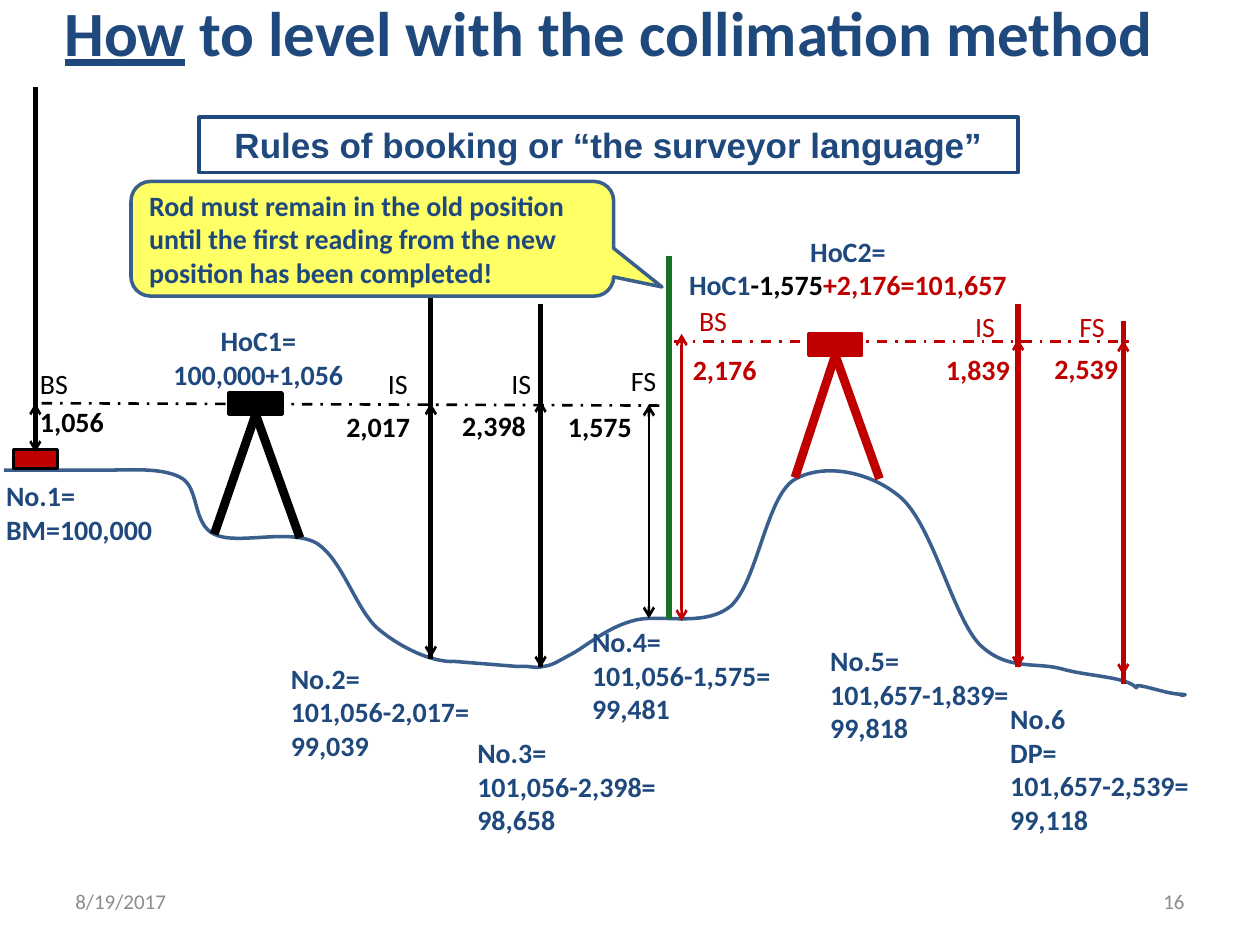
from lxml import etree
from pptx import Presentation
from pptx.dml.color import RGBColor
from pptx.enum import dml, shapes, text
from pptx.oxml.ns import qn
from pptx.util import Pt

THEME = dict(navy="1F497D", edge="3A5F8C", red="C00000", black="000000",
             green="187223", yellow="FFFF66", grey="8C8C8C",
             body="Calibri", banner="Arial",
             title_size=36, banner_size=20, text_size=16, footer_size=12)
NAVY, RED, BLACK = THEME["navy"], THEME["red"], THEME["black"]

# ---- Content: text, then places in points ----
TITLE = [[("How", {"underline": True}),
          (" to level with the collimation method", {})]]
BANNER = ["Rules of booking or “the surveyor language”"]
WARNING = ["Rod must remain in the old position until the first reading "
           "from the new position has been completed!"]
# sight, sight place, value, value place, arrow (x, top, bottom), colour
READINGS = [
    ("BS", (15.8, 205.9), "1,056", (15.8, 227.5), (20.2, 230.4, 258.5), BLACK),
    ("IS", (214.6, 205.9), "2,017", (190.8, 230.4), (246.2, 230.4, 375.8), BLACK),
    ("IS", (285.1, 205.9), "2,398", (257, 229.7), (308.9, 229, 381.6), BLACK),
    ("FS", (353.5, 204.5), "1,575", (317.5, 230.4), (370.8, 231.1, 353.5), BLACK),
    ("BS", (392.4, 169.9), "2,176", (388.8, 198), (389.5, 190.8, 355), RED),
    ("IS", (550.1, 173.5), "1,839", (533.5, 198), (581.8, 193.7, 381.6), RED),
    ("FS", (609.8, 173.5), "2,539", (595.4, 197.3), (641.9, 194.4, 385.9), RED),
]
# lines, left, top, width
STATIONS = [
    (["No.1=", "BM=100,000"], -3.6, 270, 121),
    (["No.2=", "101,056-2,017=", "99,039"], 159.1, 374.4, 126.7),
    (["No.3=", "101,056-2,398=", "98,658"], 265.7, 416.9, 121),
    (["No.4=", "101,056-1,575=", "99,481"], 331.2, 353.5, 135.4),
    (["No.5=", "101,657-1,839=", "99,818"], 467.3, 364.3, 121.7),
    (["No.6", "DP=", "101,657-2,539=", "99,118"], 570.2, 397.4, 128.9),
]
HEIGHTS = [
    (["HoC1=", "100,000+1,056"], 88.6, 181.4, 118.1),
    (["HoC2=", [("HoC1", {}), ("-1,575", {"color": BLACK}),
                ("+2,176=101,657", {"color": RED})]], 385.2, 130.3, 198.7),
]
FOOTERS = [("8/19/2017", 36, "left"), ("16", 516.2, "right")]
ROD_LENGTH = 207.5
RODS = [(20.5, 49.7, BLACK), (246.2, 169.2, BLACK), (308.9, 173.5, BLACK),
        (382.3, 146.2, THEME["green"]), (581.8, 173.5, RED), (642.2, 183.6, RED)]
SIGHT_LINES = [((23.8, 230.4), (385.2, 231.8), BLACK),
               ((385.2, 195.1), (646.6, 195.1), RED)]
# left, top, feet, colour
INSTRUMENTS = [
    (131, 224.6, [(171.4, 307.4), (122.4, 305.3)], BLACK),
    (462.2, 190.8, [(502.6, 273.6), (454.3, 272.9)], RED),
]
# One point is a straight step, three points are a curve
GROUND_START = (2.2, 268.6)
GROUND = [
    [(64.8, 268.6)],
    [(74.9, 268.6), (94.3, 267.1), (104.4, 273.6)],
    [(113.8, 280.1), (110.2, 299.5), (122.4, 305.3)],
    [(135.4, 311.8), (164.9, 301.7), (180.7, 310.3)],
    [(195.8, 319.7), (203, 347.8), (216, 359.3)],
    [(229.7, 370.8), (247.7, 378.7), (259.9, 378)],
    [(295.9, 380.9)],
    [(303.1, 380.2), (305.3, 382.3), (310.3, 380.9)],
    [(315.4, 380.2), (317.5, 378.7), (325.4, 374.4)],
    [(334.1, 370.1), (345.6, 359.3), (360.7, 355)],
    [(375.8, 349.9), (401.8, 359.3), (417.6, 346.3)],
    [(432.7, 332.6), (437.8, 284.4), (453.6, 274.3)],
    [(470.2, 264.2), (497.5, 269.3), (514.8, 284.4)],
    [(532.8, 300.2), (544.3, 351.4), (559.4, 367.9)],
    [(575.3, 383.8), (591.8, 378), (607, 382.3)],
    [(622.1, 386.6), (643.7, 386.6), (649.4, 393.1)],
    [(646.6, 388.8), (666, 396.7), (674.6, 396.7)],
    [(682.6, 397.4), (669.6, 396.7), (676.8, 397.4)],
]


def rgb(color):
    return RGBColor.from_string(color)


def write(sp, paragraphs, size=THEME["text_size"], font=THEME["body"],
          color=NAVY, bold=True, align="left", anchor="top"):
    tf = sp.text_frame
    tf.word_wrap = True
    tf.auto_size = text.MSO_AUTO_SIZE.NONE
    tf.vertical_anchor = text.MSO_ANCHOR[anchor.upper()]
    for i, runs in enumerate(paragraphs):
        p = tf.add_paragraph() if i else tf.paragraphs[0]
        p.alignment = text.PP_ALIGN[align.upper()]
        for words, extra in [(runs, {})] if isinstance(runs, str) else runs:
            r = p.add_run()
            r.text = words
            r.font.name, r.font.size, r.font.bold = font, Pt(size), bold
            r.font.color.rgb = rgb(extra.get("color", color))
            if extra.get("underline"):
                r.font.underline = True


def label(s, paragraphs, x, y, w, h, **style):
    sp = s.shapes.add_textbox(Pt(x), Pt(y), Pt(w), Pt(h))
    write(sp, paragraphs, **style)


def paint(sp, fill, line, width):
    sp.shadow.inherit = False
    if fill:
        sp.fill.solid()
        sp.fill.fore_color.rgb = rgb(fill)
    else:
        sp.fill.background()
    sp.line.color.rgb = rgb(line)
    sp.line.width = Pt(width)


def box(parent, kind, x, y, w, h, fill, line, width=2):
    sp = parent.shapes.add_shape(kind, Pt(x), Pt(y), Pt(w), Pt(h))
    paint(sp, fill, line, width)
    return sp


def line(parent, start, end, color, width, dashed=False, arrows=False):
    sp = parent.shapes.add_connector(
        shapes.MSO_CONNECTOR.STRAIGHT, *(Pt(v) for v in (*start, *end)))
    sp.line.color.rgb = rgb(color)
    sp.line.width = Pt(width)
    if dashed:
        sp.line.dash_style = dml.MSO_LINE.DASH_DOT
    if arrows:
        for tag in ("a:headEnd", "a:tailEnd"):
            etree.SubElement(sp.line._get_or_add_ln(), qn(tag), type="arrow")
    etree.SubElement(sp._element.spPr, qn("a:effectLst"))
    return sp


def ground(s):
    builder = s.shapes.build_freeform(*(Pt(v) for v in GROUND_START))
    builder.add_line_segments(
        [(Pt(x), Pt(y)) for step in GROUND for x, y in step], close=False)
    sp = builder.convert_to_shape()
    paint(sp, None, THEME["edge"], 2)
    # Merge each three line steps of a curve into one Bezier step
    steps = iter(list(sp._element.iter(qn("a:lnTo"))))
    for step in GROUND:
        nodes = [next(steps) for _ in step]
        if len(nodes) == 3:
            curve = etree.Element(qn("a:cubicBezTo"))
            nodes[0].addprevious(curve)
            for node in nodes:
                curve.append(node[0])
                node.getparent().remove(node)


def instrument(s, x, y, feet, color):
    group = s.shapes.add_group_shape()
    head = box(group, shapes.MSO_SHAPE.RECTANGLE, x, y, 30.2, 12.2, color, color)
    for foot in feet:
        leg = line(group, (x + 15.1, y + 12.2), foot, color, 5)
        leg.begin_connect(head, 2)


def main():
    prs = Presentation()
    prs.slide_width, prs.slide_height = Pt(720), Pt(540)
    s = prs.slides.add_slide(prs.slide_layouts[5])

    # Title and footer
    title = s.shapes.title
    title.left, title.top, title.width, title.height = (
        Pt(v) for v in (23.8, -12.2, 648, 59.8))
    write(title, TITLE, size=THEME["title_size"], align="center", anchor="middle")
    for words, x, align in FOOTERS:
        label(s, [words], x, 500.4, 167.8, 28.8, size=THEME["footer_size"],
              color=THEME["grey"], bold=False, align=align, anchor="middle")

    # Ground, benchmark and lines of sight
    ground(s)
    rect = shapes.MSO_SHAPE.RECTANGLE
    benchmark = box(s, rect, 7.9, 257, 25.2, 10.8, RED, BLACK, 1.75)
    for start, end, color in SIGHT_LINES:
        line(s, start, end, color, 1.5, dashed=True)
    banner = box(s, rect, 113.8, 67, 468, 31.7, None, NAVY)
    write(banner, BANNER, size=THEME["banner_size"], font=THEME["banner"],
          align="center")

    # Rods, the first standing on the benchmark
    rods = [line(s, (x, y), (x, y + ROD_LENGTH), color, 3) for x, y, color in RODS]
    rods[0].end_connect(benchmark, 0)

    # Readings
    for sight, sight_at, value, value_at, (x, top, bottom), color in READINGS:
        line(s, (x, top), (x, bottom), color, 1.5, arrows=True)
        label(s, [sight], *sight_at, 31.7, 26.6, color=color, bold=False)
        label(s, [value], *value_at, 55.4, 26.6, color=color)

    # Station results and collimation heights
    for notes, align in ((STATIONS, "left"), (HEIGHTS, "center")):
        for lines, x, y, w in notes:
            label(s, lines, x, y, w, 7.2 + 19.4 * len(lines), align=align)

    for item in INSTRUMENTS:
        instrument(s, *item)

    # Callout
    callout = box(s, shapes.MSO_SHAPE.ROUNDED_RECTANGULAR_CALLOUT,
                  74.9, 103.7, 275.8, 65.5, THEME["yellow"], THEME["edge"])
    for i, value in enumerate((0.6, 0.42, 0.17)):
        callout.adjustments[i] = value
    write(callout, WARNING, anchor="middle")

    prs.save("out.pptx")


if __name__ == "__main__":
    main()
